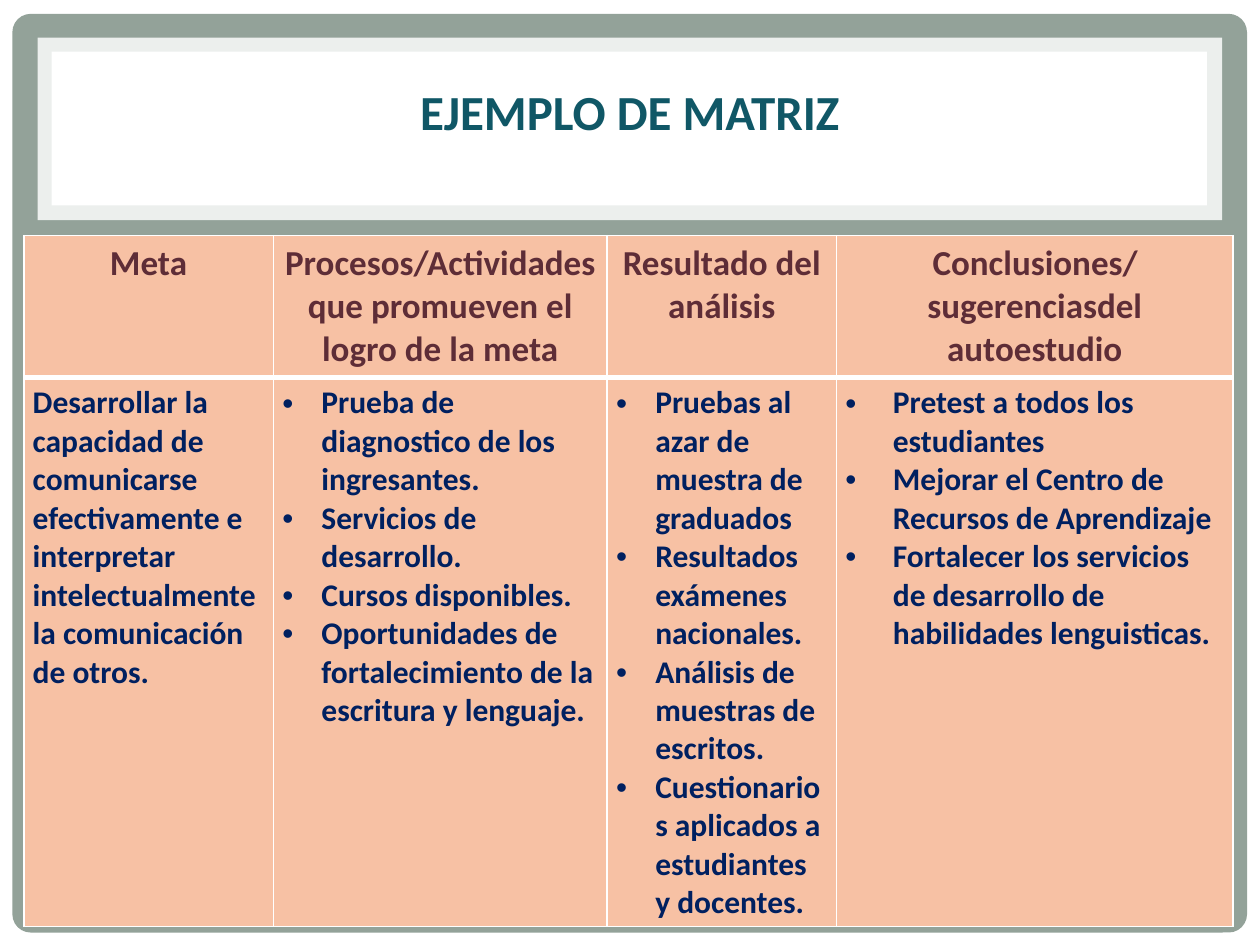
from dataclasses import dataclass

from lxml import etree
from pptx import Presentation
from pptx.dml.color import RGBColor
from pptx.enum import shapes, text
from pptx.oxml import ns
from pptx.util import Cm, Pt


@dataclass(frozen=True)
class Theme:
    font: str = "Calibri"
    backdrop: str = "DEF5FA"
    white: str = "FFFFFF"
    frame: str = "93A299"
    cell: str = "F7C1A4"
    title: str = "105766"
    heading: str = "5E2D37"
    body: str = "002060"
    title_size: int = 28
    heading_size: int = 20
    body_size: int = 18


theme = Theme()


def add_panel(kind, left, top, width, height, color):
    panel = slide.shapes.add_shape(kind, Cm(left), Cm(top), Cm(width), Cm(height))
    panel.shadow.inherit = False
    panel.fill.solid()
    panel.fill.fore_color.rgb = RGBColor.from_string(color)
    panel.line.fill.background()
    return panel


def style(paragraph, size, color, align):
    paragraph.alignment = align
    font = paragraph.font
    font.name, font.size, font.bold = theme.font, Pt(size), True
    font.color.rgb = RGBColor.from_string(color)


prs = Presentation()
prs.slide_width, prs.slide_height = Cm(25.4), Cm(19.05)
slide = prs.slides.add_slide(prs.slide_layouts[6])
slide.background.fill.solid()
slide.background.fill.fore_color.rgb = RGBColor.from_string(theme.backdrop)

# Page, rounded frame and title panels
RECT = shapes.MSO_SHAPE.RECTANGLE
add_panel(RECT, 0, 0, 25.4, 19.05, theme.white)
frame = add_panel(shapes.MSO_SHAPE.ROUNDED_RECTANGLE, 0.25, 0.28, 24.89, 18.52, theme.frame)
frame.adjustments[0] = 0.02
title_border = add_panel(RECT, 0.76, 0.76, 23.88, 3.68, theme.white)
border_color = title_border.fill._xPr.find(".//" + ns.qn("a:srgbClr"))
etree.SubElement(border_color, ns.qn("a:alpha"), val="83000")
add_panel(RECT, 1.04, 1.04, 23.29, 3.1, theme.white)

# Title
title = slide.shapes.add_textbox(Cm(1.75), Cm(1.02), Cm(21.89), Cm(2.44)).text_frame
title.word_wrap = True
title.vertical_anchor = text.MSO_ANCHOR.MIDDLE
title.text = "EJEMPLO DE MATRIZ"
style(title.paragraphs[0], theme.title_size, theme.title, text.PP_ALIGN.CENTER)

# Matrix content: heading, column width, bullet indent, entries
columns = [
    ("Meta", 5.03, 0, [
        "Desarrollar la capacidad de comunicarse efectivamente e interpretar "
        "intelectualmente la comunicación de otros."]),
    ("Procesos/Actividades que promueven el logro de la meta", 6.73, 0.79, [
        "Prueba de diagnostico de los ingresantes.",
        "Servicios de desarrollo.",
        "Cursos disponibles.",
        "Oportunidades de fortalecimiento de la escritura y lenguaje."]),
    ("Resultado del análisis", 4.62, 0.79, [
        "Pruebas al azar de muestra de graduados",
        "Resultados exámenes nacionales.",
        "Análisis de muestras de escritos.",
        "Cuestionarios aplicados a estudiantes y docentes."]),
    ("Conclusiones/sugerenciasdel autoestudio", 8, 0.96, [
        "Pretest a todos los estudiantes",
        "Mejorar el Centro de Recursos de Aprendizaje",
        "Fortalecer los servicios de desarrollo de habilidades lenguisticas."]),
]
row_heights = [2.86, 11.07]
matrix = slide.shapes.add_table(
    2, len(columns), Cm(0.48), Cm(4.75),
    Cm(sum(column[1] for column in columns)), Cm(sum(row_heights))).table
for row, height in zip(matrix.rows, row_heights):
    row.height = Cm(height)

# Text and bullets
for index, (heading, width, indent, entries) in enumerate(columns):
    matrix.columns[index].width = Cm(width)
    heading_cell, body_cell = matrix.cell(0, index), matrix.cell(1, index)
    heading_cell.text = heading
    style(heading_cell.text_frame.paragraphs[0], theme.heading_size,
          theme.heading, text.PP_ALIGN.CENTER)
    body_cell.text = "\n".join(entries)
    for entry in body_cell.text_frame.paragraphs:
        style(entry, theme.body_size, theme.body, text.PP_ALIGN.LEFT)
        if indent:
            props = entry._p.get_or_add_pPr()
            props.set("marL", str(Cm(indent)))
            props.set("indent", str(-Cm(indent)))
            bullet_font = etree.Element(ns.qn("a:buFont"), typeface="Arial")
            bullet = etree.Element(ns.qn("a:buChar"), char="•")
            props.insert(0, bullet_font)
            props.insert(1, bullet)

# Cell margins, borders and fill; a thick rule parts headings from entries
for row_index in range(2):
    thick_side = "lnT" if row_index else "lnB"
    for index in range(len(columns)):
        cell = matrix.cell(row_index, index)
        cell.margin_left = cell.margin_right = Cm(0.18)
        cell.margin_top = cell.margin_bottom = Cm(0.13)
        props = cell._tc.get_or_add_tcPr()
        for side in ("lnL", "lnR", "lnT", "lnB"):
            weight = Pt(3 if side == thick_side else 1)
            border = etree.SubElement(props, ns.qn("a:" + side), w=str(weight))
            paint = etree.SubElement(border, ns.qn("a:solidFill"))
            etree.SubElement(paint, ns.qn("a:srgbClr"), val=theme.white)
        cell.fill.solid()
        cell.fill.fore_color.rgb = RGBColor.from_string(theme.cell)

prs.save("out.pptx")
